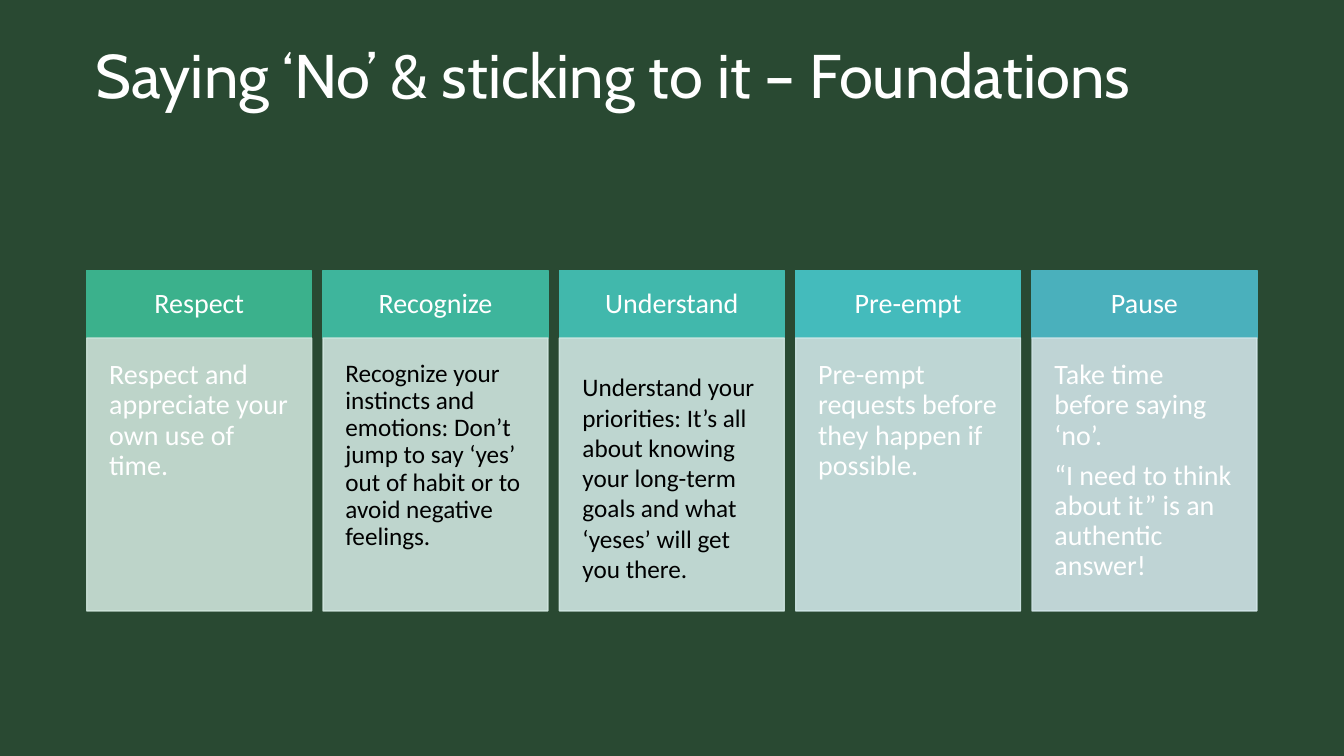
"""Build the slide on the foundations of saying no."""
import dataclasses

import pptx
import pptx.dml.color
import pptx.enum.shapes
import pptx.enum.text
import pptx.oxml.ns
import pptx.util
from lxml import etree

Pt = pptx.util.Pt
ALIGN = pptx.enum.text.PP_ALIGN
ANCHOR = pptx.enum.text.MSO_ANCHOR


@dataclasses.dataclass(frozen=True)
class Theme:
    backdrop: str = "1B3021"
    veil: str = "2B4C34"
    light: str = "FFFFFF"
    dark: str = "000000"
    title_font: str = "Cabin"
    body_font: str = "Calibri"
    title_size: float = 44
    text_size: float = 20
    small_size: float = 18
    headers: tuple = ("3BB18C", "3EB59C", "41B8AC", "44BBBC", "4AB0BC")
    bodies: tuple = ("CEE4DA", "CFE5DE", "CFE6E2", "CFE6E6", "D0E4E7")


THEME = Theme()
SLIDE_WIDTH, SLIDE_HEIGHT = 960, 540
CARD_LEFT, CARD_PITCH, CARD_WIDTH = 62, 168.8, 160.6
HEADER_TOP, HEADER_HEIGHT, BODY_HEIGHT = 193.4, 48, 195
BODY_TOP = HEADER_TOP + HEADER_HEIGHT

CARDS = [
    ("Respect", "Respect and appreciate your own use of time.", {}),
    ("Recognize",
     "Recognize your instincts and emotions: Don’t jump to say ‘yes’ "
     "out of habit or to avoid negative feelings.",
     {"size": THEME.small_size, "color": THEME.dark}),
    ("Understand", "", {}),
    ("Pre-empt", "Pre-empt requests before they happen if possible.", {}),
    ("Pause",
     "Take time before saying ‘no’.\n"
     "“I need to think about it” is an authentic answer!", {}),
]
PRIORITIES = ("Understand your priorities: It’s all about knowing your "
              "long-term goals and what ‘yeses’ will get you there.")


def rgb(value):
    return pptx.dml.color.RGBColor.from_string(value)


def set_paint(paint, color, opacity):
    paint.solid()
    paint.fore_color.rgb = rgb(color)
    if opacity < 100:
        tint = paint._xPr.find(".//" + pptx.oxml.ns.qn("a:srgbClr"))
        etree.SubElement(tint, pptx.oxml.ns.qn("a:alpha"), val=str(opacity * 1000))


def write_text(frame, text, *, size=THEME.text_size, color=THEME.light,
               font=THEME.body_font, align=ALIGN.LEFT, anchor=ANCHOR.TOP,
               insets=(7.2, 3.6), line_spacing=0.9, space_after=7):
    frame.word_wrap = True
    frame.vertical_anchor = anchor
    frame.margin_left = frame.margin_right = Pt(insets[0])
    frame.margin_top = frame.margin_bottom = Pt(insets[1])
    for index, line in enumerate(text.split("\n")):
        paragraph = frame.add_paragraph() if index else frame.paragraphs[0]
        paragraph.alignment = align
        paragraph.line_spacing = line_spacing
        paragraph.space_after = Pt(space_after)
        run = paragraph.add_run()
        run.text = line
        run.font.name = font
        run.font.size = Pt(size)
        run.font.color.rgb = rgb(color)


def add_panel(slide, left, top, width, height, color, opacity=100, outlined=True):
    panel = slide.shapes.add_shape(
        pptx.enum.shapes.MSO_SHAPE.RECTANGLE, Pt(left), Pt(top), Pt(width), Pt(height))
    panel.shadow.inherit = False
    set_paint(panel.fill, color, opacity)
    if outlined:
        panel.line.width = Pt(1)
        set_paint(panel.line.fill, color, opacity)
    else:
        panel.line.fill.background()
    return panel


def add_label(slide, left, top, width, height, text, **text_format):
    label = slide.shapes.add_textbox(Pt(left), Pt(top), Pt(width), Pt(height))
    write_text(label.text_frame, text, **text_format)


def add_card(slide, index, heading, advice, advice_format):
    left = CARD_LEFT + index * CARD_PITCH
    header = add_panel(slide, left, HEADER_TOP, CARD_WIDTH, HEADER_HEIGHT,
                       THEME.headers[index])
    write_text(header.text_frame, heading, align=ALIGN.CENTER,
               anchor=ANCHOR.MIDDLE, insets=(13, 13), space_after=0)
    body = add_panel(slide, left, BODY_TOP, CARD_WIDTH, BODY_HEIGHT,
                     THEME.bodies[index], opacity=90)
    if advice:
        write_text(body.text_frame, advice, insets=(16, 16), **advice_format)


def main():
    deck = pptx.Presentation()
    deck.slide_width, deck.slide_height = Pt(SLIDE_WIDTH), Pt(SLIDE_HEIGHT)
    slide = deck.slides.add_slide(deck.slide_layouts[6])
    set_paint(slide.background.fill, THEME.backdrop, 100)
    add_panel(slide, 0, 0, SLIDE_WIDTH, SLIDE_HEIGHT, THEME.veil,
              opacity=90, outlined=False)
    add_label(slide, 61.2, 28.8, 837.4, 104.4,
              "Saying ‘No’ & sticking to it – Foundations",
              size=THEME.title_size, font=THEME.title_font, space_after=0)
    for index, card in enumerate(CARDS):
        add_card(slide, index, *card)
    add_label(slide, 409, 262, 144.8, 160, PRIORITIES, size=THEME.small_size,
              color=THEME.dark, line_spacing=1, space_after=0)
    deck.save("out.pptx")


if __name__ == "__main__":
    main()
